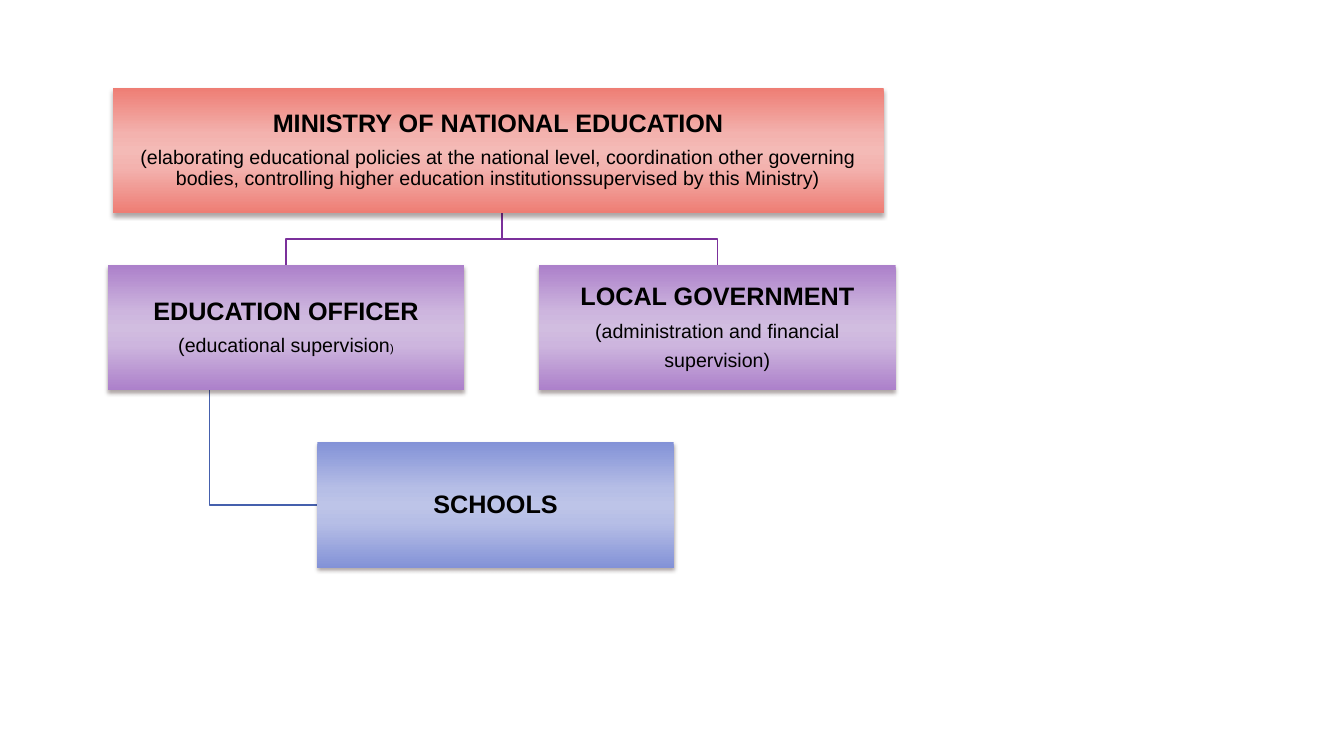
from lxml import etree
from pptx import Presentation
from pptx import util as u
from pptx.dml import color
from pptx.enum import shapes, text
from pptx.oxml import ns

COLOURS = {
    "text": "000000", "shadow": "1A0000",
    "purple line": "7B309B", "blue line": "4560AD",
    "red": ("EE7D74", "F3B2AE", "F4BAB6"),
    "purple": ("AC80CA", "CDB5DE", "D1BDE0"),
    "blue": ("8392D7", "B6BEE6", "BDC4E8"),
}
TOP, HEIGHT, PITCH = 2.21, 3.16, 4.47
WIDTH = 8.98
OFFICER, GOVERNMENT, SCHOOLS = 2.72, 13.59, 8.0
STEM, TRUNK = 12.65, 5.28


def apply(target, values):
    for name, value in values.items():
        setattr(target, name, value)


def row_top(row):
    return TOP + row * PITCH


def add_child(parent, tag, **attributes):
    return etree.SubElement(parent, ns.qn(tag), attributes)


def fill_gradient(box, shades):
    box.fill.gradient()
    box.fill.gradient_angle = 270
    stops = box._element.spPr.find(ns.qn("a:gradFill")).find(ns.qn("a:gsLst"))
    for stop in list(stops):
        stops.remove(stop)
    edge, inner, middle = shades
    for place, shade in zip((0, 37, 50, 64, 100), (edge, inner, middle, inner, edge)):
        stop = add_child(stops, "a:gs", pos=str(place * 1000))
        add_child(stop, "a:srgbClr", val=shade)


def add_shadow(box):
    box.shadow.inherit = False
    effects = box._element.spPr.find(ns.qn("a:effectLst"))
    outer = add_child(effects, "a:outerShdw", blurRad=str(u.Pt(3.1)),
                      dist=str(u.Pt(2)), dir="5400000", rotWithShape="0")
    shade = add_child(outer, "a:srgbClr", val=COLOURS["shadow"])
    add_child(shade, "a:alpha", val="35000")


def write_line(para, spans):
    size = spans[0][1]
    apply(para, {"alignment": text.PP_ALIGN.CENTER, "line_spacing": 0.9,
                 "space_after": u.Pt(size * 0.4)})
    for words, points in spans:
        span = para.add_run()
        span.text = words
        apply(span.font, {"name": "Arial", "size": u.Pt(points), "bold": points == 18})
        span.font.color.rgb = color.RGBColor.from_string(COLOURS["text"])


def add_body(page, left, row, width, palette, lines):
    box = page.shapes.add_shape(shapes.MSO_SHAPE.RECTANGLE, u.Cm(left),
                                u.Cm(row_top(row)), u.Cm(width), u.Cm(HEIGHT))
    fill_gradient(box, COLOURS[palette])
    box.line.fill.background()
    add_shadow(box)
    frame = box.text_frame
    margins = ("margin_left", "margin_right", "margin_top", "margin_bottom")
    apply(frame, dict.fromkeys(margins, u.Cm(0.03)))
    apply(frame, {"word_wrap": True, "vertical_anchor": text.MSO_ANCHOR.MIDDLE})
    for index, spans in enumerate(lines):
        para = frame.add_paragraph() if index else frame.paragraphs[0]
        write_line(para, spans)


def add_link(page, points, colour):
    start, *rest = [(u.Cm(x), u.Cm(y)) for x, y in points]
    builder = page.shapes.build_freeform(*start)
    builder.add_line_segments(rest, close=False)
    link = builder.convert_to_shape()
    link.shadow.inherit = False
    link.fill.background()
    link.line.width = u.Pt(1)
    link.line.color.rgb = color.RGBColor.from_string(COLOURS[colour])


def main():
    deck = Presentation()
    apply(deck, {"slide_width": u.Cm(33.87), "slide_height": u.Cm(19.05)})
    page = deck.slides.add_slide(deck.slide_layouts[6])

    ministry_bottom = row_top(0) + HEIGHT
    branch = (ministry_bottom + row_top(1)) / 2
    for left in (GOVERNMENT, OFFICER):
        centre = left + WIDTH / 2
        add_link(page, [(STEM, ministry_bottom), (STEM, branch),
                        (centre, branch), (centre, row_top(1))], "purple line")
    schools_middle = row_top(2) + HEIGHT / 2
    add_link(page, [(TRUNK, row_top(1) + HEIGHT), (TRUNK, schools_middle),
                    (SCHOOLS, schools_middle)], "blue line")

    add_body(page, 2.84, 0, 19.43, "red", [
        [("MINISTRY OF NATIONAL EDUCATION", 18)],
        [("(elaborating educational policies at the national level, coordination "
          "other governing bodies, controlling higher education "
          "institutionssupervised by this Ministry)", 14)],
    ])
    add_body(page, OFFICER, 1, WIDTH, "purple", [
        [("EDUCATION OFFICER", 18)],
        [("(educational supervision", 14), (")", 8)],
    ])
    add_body(page, SCHOOLS, 2, WIDTH, "blue", [[("SCHOOLS", 18)]])
    add_body(page, GOVERNMENT, 1, WIDTH, "purple", [
        [("LOCAL GOVERNMENT", 18)],
        [("(administration and financial", 14)],
        [("supervision)", 14)],
    ])
    deck.save("out.pptx")


if __name__ == "__main__":
    main()
